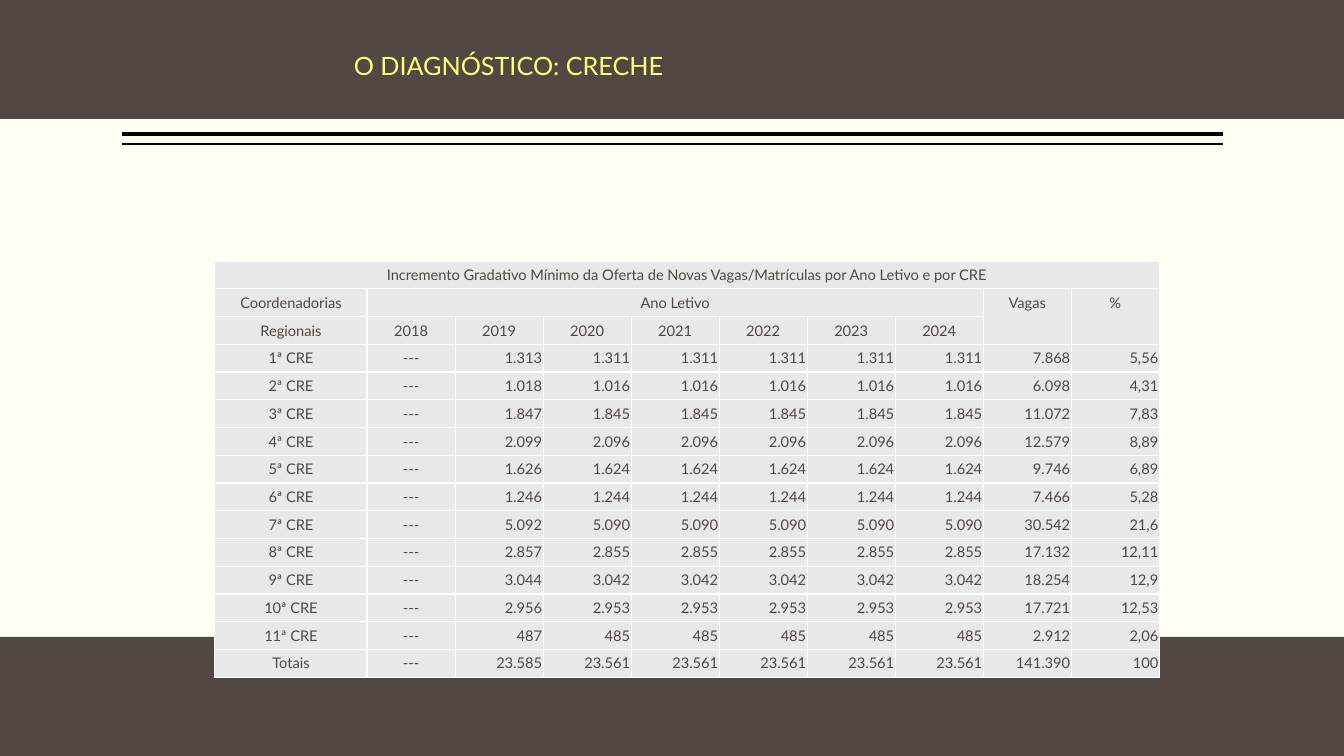
from lxml.etree import SubElement
from pptx import Presentation
from pptx.dml.color import RGBColor
from pptx.enum.shapes import MSO_CONNECTOR, MSO_SHAPE
from pptx.enum.text import MSO_ANCHOR, MSO_AUTO_SIZE, PP_ALIGN
from pptx.oxml.ns import qn
from pptx.util import Pt

COLORS = {
    "background": "FFFFF3",
    "band": "514843",
    "rule": "000000",
    "title": "FFFF76",
    "text": "514843",
    "cell": "E9E8E8",
    "border": "FFFFFF",
}
FONT = "Lato"
WIDTH, HEIGHT = 960, 540
BAND_HEIGHT = 85
YEARS = [str(year) for year in range(2018, 2025)]
REGIONS = [
    ("1ª CRE", "1.313", "1.311", "7.868", "5,56"),
    ("2ª CRE", "1.018", "1.016", "6.098", "4,31"),
    ("3ª CRE", "1.847", "1.845", "11.072", "7,83"),
    ("4ª CRE", "2.099", "2.096", "12.579", "8,89"),
    ("5ª CRE", "1.626", "1.624", "9.746", "6,89"),
    ("6ª CRE", "1.246", "1.244", "7.466", "5,28"),
    ("7ª CRE", "5.092", "5.090", "30.542", "21,6"),
    ("8ª CRE", "2.857", "2.855", "17.132", "12,11"),
    ("9ª CRE", "3.044", "3.042", "18.254", "12,9"),
    ("10ª CRE", "2.956", "2.953", "17.721", "12,53"),
    ("11ª CRE", "487", "485", "2.912", "2,06"),
    ("Totais", "23.585", "23.561", "141.390", "100"),
]
HEADER_ROWS = 3


def rgb(name):
    return RGBColor.from_string(COLORS[name])


def format_text(p, size, color):
    for r in p.runs:
        r.font.name = FONT
        r.font.size = Pt(size)
        r.font.color.rgb = rgb(color)


def add_rule(s, y, weight):
    line = s.shapes.add_connector(
        MSO_CONNECTOR.STRAIGHT, Pt(873.5), Pt(y), Pt(87), Pt(y))
    line.line.color.rgb = rgb("rule")
    line.line.width = Pt(weight)
    SubElement(line.element.spPr, qn("a:effectLst"))


def add_band(s, top):
    band = s.shapes.add_shape(
        MSO_SHAPE.RECTANGLE, 0, Pt(top), Pt(WIDTH), Pt(BAND_HEIGHT))
    band.shadow.inherit = False
    band.fill.solid()
    band.fill.fore_color.rgb = rgb("band")
    band.line.fill.background()


def set_title(s, text):
    title = s.shapes.title
    s.shapes.element.append(title.element)
    title.left, title.top = Pt(245.5), Pt(32.5)
    title.width, title.height = Pt(600.5), Pt(29)
    tf = title.text_frame
    tf.text = text
    tf.word_wrap = True
    tf.auto_size = MSO_AUTO_SIZE.SHAPE_TO_FIT_TEXT
    tf.vertical_anchor = MSO_ANCHOR.TOP
    p = tf.paragraphs[0]
    p.alignment = PP_ALIGN.LEFT
    format_text(p, 18, "title")


def add_borders(cell):
    tcPr = cell._tc.get_or_add_tcPr()
    for side in ("lnL", "lnR", "lnT", "lnB"):
        ln = SubElement(tcPr, qn(f"a:{side}"), w=str(Pt(0.96)))
        fill = SubElement(ln, qn("a:solidFill"))
        SubElement(fill, qn("a:srgbClr"), val=COLORS["border"])


def fill_cell(cell, text, alignment):
    cell.margin_left = cell.margin_right = Pt(0.75)
    add_borders(cell)
    cell.fill.solid()
    cell.fill.fore_color.rgb = rgb("cell")
    cell.text_frame.text = text
    p = cell.text_frame.paragraphs[0]
    p.alignment = alignment
    format_text(p, 10.5, "text")


def table_rows():
    heading = ("Incremento Gradativo Mínimo da Oferta de Novas "
               "Vagas/Matrículas por Ano Letivo e por CRE")
    rows = [
        [heading] + [""] * 9,
        ["Coordenadorias", "Ano Letivo"] + [""] * 6 + ["Vagas", "%"],
        ["Regionais", *YEARS, "", ""],
    ]
    for region, first, later, total, share in REGIONS:
        rows.append([region, "---", first] + [later] * 5 + [total, share])
    return rows


def add_places_table(s):
    rows = table_rows()
    frame = s.shapes.add_table(
        len(rows), len(rows[0]), Pt(153.5), Pt(186.5), Pt(674.64), Pt(251.25))
    table = frame.table
    table.first_row = False
    table.horz_banding = False
    for i, column in enumerate(table.columns):
        column.width = Pt(62.88 if i else 108.72)
    for row in table.rows:
        row.height = Pt(16.75)
    for i, row in enumerate(rows):
        for j, text in enumerate(row):
            centred = i < HEADER_ROWS or j < 2
            alignment = PP_ALIGN.CENTER if centred else PP_ALIGN.RIGHT
            fill_cell(table.cell(i, j), text, alignment)
    for start, end in (((0, 0), (0, 9)), ((1, 1), (1, 7)),
                       ((1, 8), (2, 8)), ((1, 9), (2, 9))):
        table.cell(*start).merge(table.cell(*end))


def main():
    prs = Presentation()
    prs.slide_width, prs.slide_height = Pt(WIDTH), Pt(HEIGHT)
    s = prs.slides.add_slide(prs.slide_layouts[5])
    s.background.fill.solid()
    s.background.fill.fore_color.rgb = rgb("background")
    add_rule(s, 96, 3)
    add_rule(s, 103, 1)
    for top in (HEIGHT - BAND_HEIGHT, 0):
        add_band(s, top)
    set_title(s, "O DIAGNÓSTICO: CRECHE")
    add_places_table(s)
    prs.save("out.pptx")


if __name__ == "__main__":
    main()
